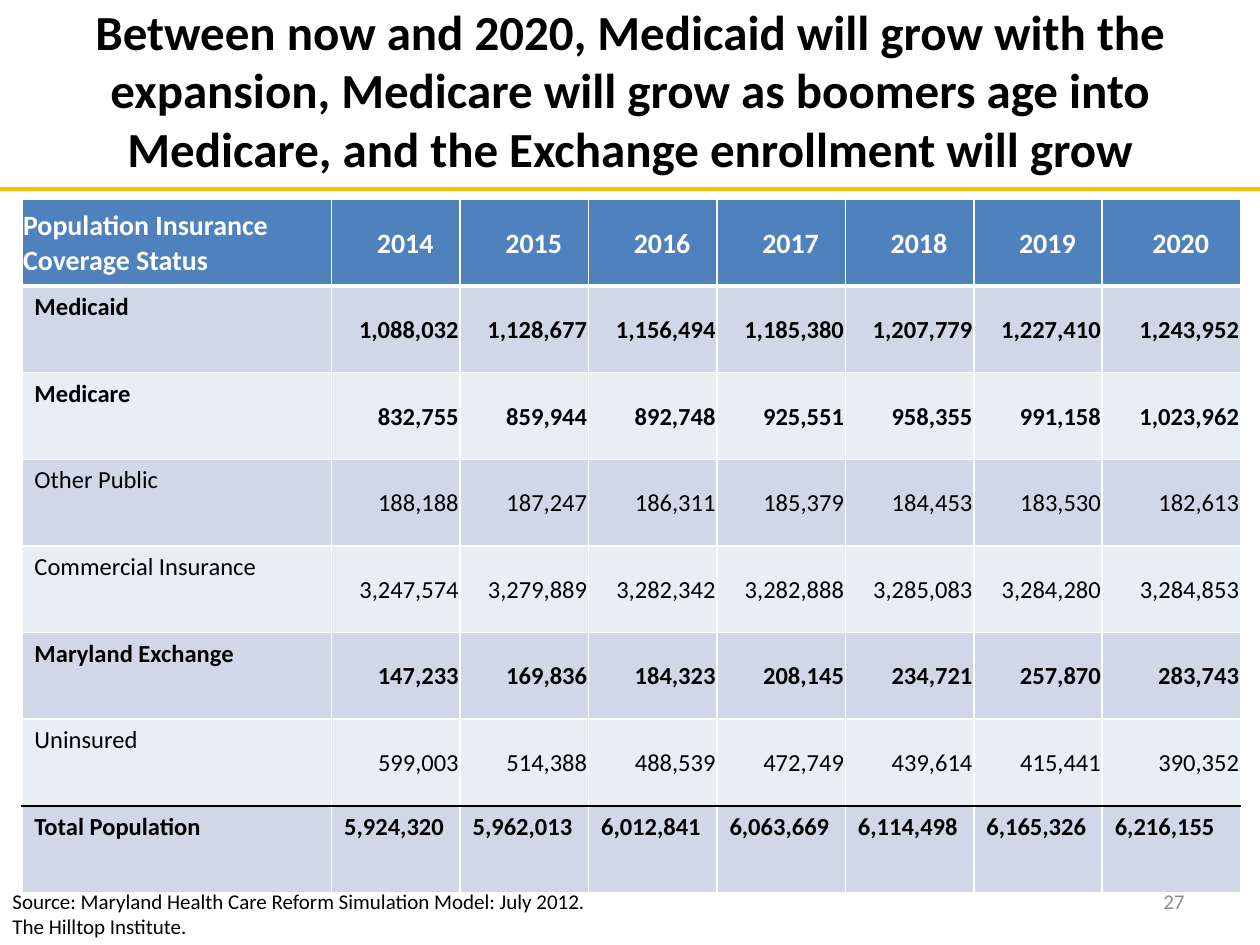
from lxml.etree import SubElement
from pptx import Presentation
from pptx.dml.color import RGBColor
from pptx.enum.shapes import MSO_CONNECTOR as Connector
from pptx.enum.text import MSO_ANCHOR as Anchor, MSO_AUTO_SIZE as AutoSize, PP_ALIGN as Align
from pptx.oxml.ns import qn
from pptx.util import Pt

TITLE = ("Between now and 2020, Medicaid will grow with the expansion, Medicare will grow "
         "as boomers age into Medicare, and the Exchange enrollment will grow")
SOURCE = "Source: Maryland Health Care Reform Simulation Model: July 2012. The Hilltop Institute."
HEADER = ["Population Insurance Coverage Status", *map(str, range(2014, 2021))]
POPULATION = [
    ("Medicaid", 1088032, 1128677, 1156494, 1185380, 1207779, 1227410, 1243952),
    ("Medicare", 832755, 859944, 892748, 925551, 958355, 991158, 1023962),
    ("Other Public", 188188, 187247, 186311, 185379, 184453, 183530, 182613),
    ("Commercial Insurance", 3247574, 3279889, 3282342, 3282888, 3285083, 3284280, 3284853),
    ("Maryland Exchange", 147233, 169836, 184323, 208145, 234721, 257870, 283743),
    ("Uninsured", 599003, 514388, 488539, 472749, 439614, 415441, 390352),
    ("Total Population", 5924320, 5962013, 6012841, 6063669, 6114498, 6165326, 6216155),
]
BOLD_ROWS = {"Medicaid", "Medicare", "Maryland Exchange", "Total Population"}
COLUMN_WIDTHS = [177] + [73.4] * 6 + [79]
ROW_HEIGHT = 49.5
DEFAULT_INSETS = (7.2, 3.6, 7.2, 3.6)
TIGHT_INSETS = (0.72, 0.72, 0.72, 0)
YEAR_INSETS = (11.5, 0.72, 0.72, 0)


def color(value):
    """Turn a hex string into a colour."""
    return RGBColor.from_string(value)


def write(frame, text, size=14, fill="000000", bold=False, align=Align.LEFT):
    """Write one formatted paragraph into a text frame."""
    para = frame.paragraphs[0]
    para.alignment = align
    span = para.add_run()
    span.text = text
    span.font.name = "Calibri"
    span.font.size = Pt(size)
    span.font.bold = bold
    span.font.color.rgb = color(fill)


def add_title(page, text):
    """Place and fill the title placeholder."""
    title = page.shapes.title
    title.left, title.top, title.width, title.height = Pt(0), Pt(6), Pt(720), Pt(90)
    frame = title.text_frame
    frame.auto_size = AutoSize.NONE
    frame.word_wrap = True
    frame.vertical_anchor = Anchor.MIDDLE
    write(frame, text, size=28, bold=True, align=Align.CENTER)


def add_text(page, text, left, top, width, height, anchor=Anchor.TOP, **style):
    """Add a wrapping text box."""
    box = page.shapes.add_textbox(Pt(left), Pt(top), Pt(width), Pt(height))
    box.text_frame.word_wrap = True
    box.text_frame.vertical_anchor = anchor
    write(box.text_frame, text, size=12, **style)


def add_rule(page, top):
    """Draw the full-width rule below the title."""
    rule = page.shapes.add_connector(Connector.STRAIGHT, Pt(0), Pt(top), Pt(720), Pt(top))
    rule.line.color.rgb = color("FFC000")
    rule.line.width = Pt(2.25)
    SubElement(rule._element.spPr, qn("a:effectLst"))


def set_borders(cell, top=("FFFFFF", 1), bottom=("FFFFFF", 1)):
    """Give a cell white side borders and the stated top and bottom ones."""
    properties = cell._tc.get_or_add_tcPr()
    white = ("FFFFFF", 1)
    for index, (side, (value, width)) in enumerate(
            [("lnL", white), ("lnR", white), ("lnT", top), ("lnB", bottom)]):
        line = properties.makeelement(qn(f"a:{side}"), {"w": str(Pt(width))})
        SubElement(SubElement(line, qn("a:solidFill")), qn("a:srgbClr"), val=value)
        properties.insert(index, line)


def fill_cell(cell, text, fill, insets=DEFAULT_INSETS, anchor=Anchor.TOP, borders=None, **style):
    """Fill a table cell with its background, borders and text."""
    cell.fill.solid()
    cell.fill.fore_color.rgb = color(fill)
    cell.margin_left, cell.margin_top, cell.margin_right, cell.margin_bottom = map(Pt, insets)
    cell.vertical_anchor = anchor
    set_borders(cell, **(borders or {}))
    write(cell.text_frame, text, **({"fill": "000000"} | style.pop("font", {}) | style))


def add_population_table(page):
    """Add the table of population by coverage status and year."""
    table = page.shapes.add_table(
        len(POPULATION) + 1, len(HEADER), Pt(12.5), Pt(114),
        Pt(sum(COLUMN_WIDTHS)), Pt(ROW_HEIGHT * (len(POPULATION) + 1))).table
    for column, width in zip(table.columns, COLUMN_WIDTHS):
        column.width = Pt(width)
    for row in table.rows:
        row.height = Pt(ROW_HEIGHT)

    for index, text in enumerate(HEADER):
        fill_cell(table.cell(0, index), text, "4F81BD",
                  insets=YEAR_INSETS if index else TIGHT_INSETS, anchor=Anchor.MIDDLE,
                  borders={"bottom": ("FFFFFF", 3)}, font={"fill": "FFFFFF"},
                  size=16, bold=True, align=Align.CENTER if index else Align.LEFT)

    last = len(POPULATION)
    edges = {1: {"top": ("FFFFFF", 3)}, last - 1: {"bottom": ("000000", 1)},
             last: {"top": ("000000", 1)}}
    for number, (label, *counts) in enumerate(POPULATION, start=1):
        shared = {"fill": "D0D8E8" if number % 2 else "E9EDF4",
                  "borders": edges.get(number), "bold": label in BOLD_ROWS}
        figures = {} if number == last else {
            "insets": TIGHT_INSETS, "anchor": Anchor.MIDDLE, "align": Align.RIGHT}
        fill_cell(table.cell(number, 0), label, **shared)
        for index, count in enumerate(counts, start=1):
            fill_cell(table.cell(number, index), f"{count:,}", **shared, **figures)


def main():
    """Build the slide and save the deck."""
    deck = Presentation()
    deck.slide_width, deck.slide_height = Pt(720), Pt(540)
    page = deck.slides.add_slide(deck.slide_layouts[5])
    add_title(page, TITLE)
    add_text(page, "27", 516, 500.5, 168, 28.8, anchor=Anchor.MIDDLE,
             fill="8C8C8C", align=Align.RIGHT)
    add_population_table(page)
    add_text(page, SOURCE, 0, 504, 342, 36)
    add_rule(page, 108)
    deck.save("out.pptx")


if __name__ == "__main__":
    main()
